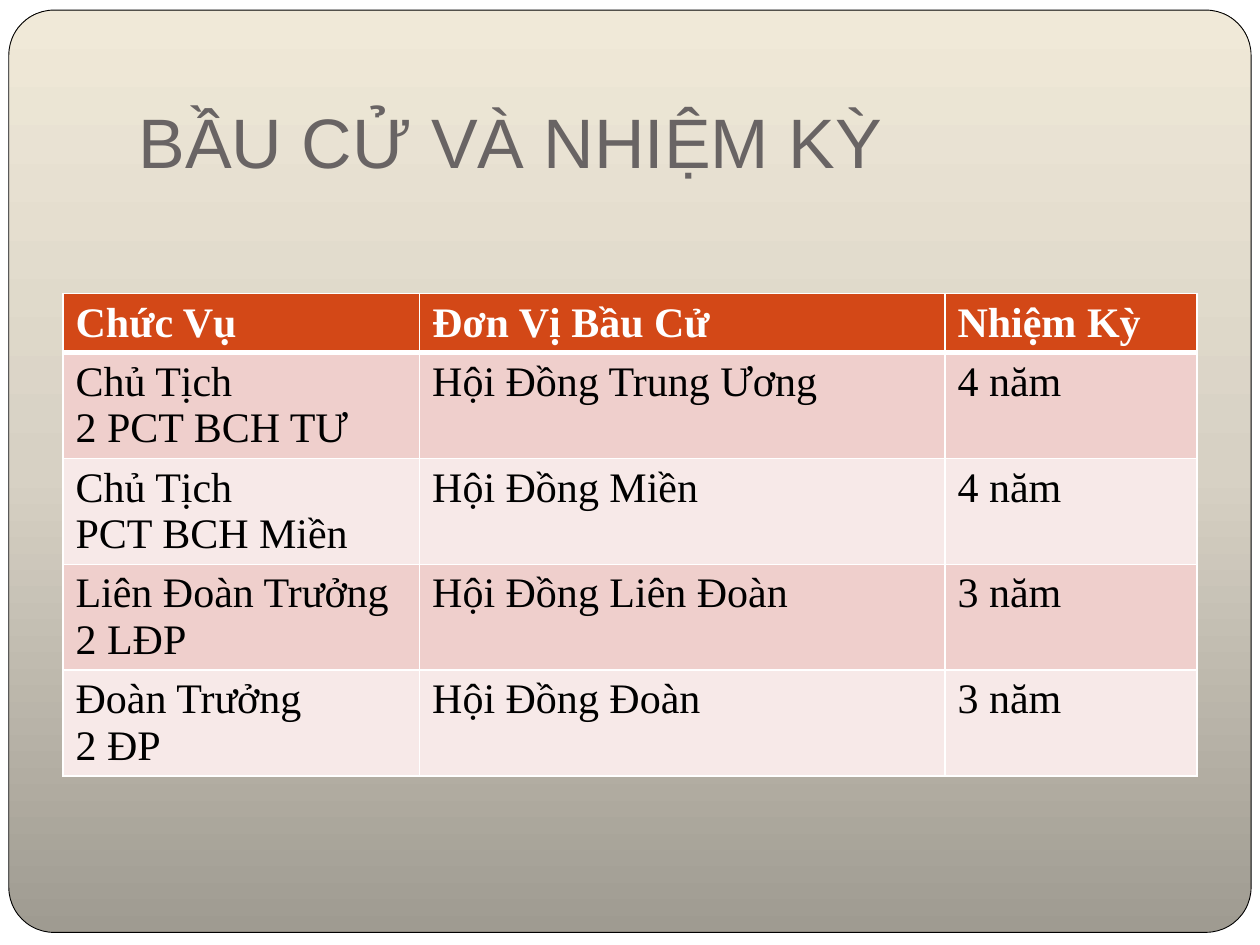
from copy import deepcopy

from lxml.etree import SubElement
from pptx import Presentation
from pptx.dml.color import RGBColor
from pptx.enum.shapes import MSO_SHAPE as Shape
from pptx.enum.text import MSO_ANCHOR as Anchor, PP_ALIGN as Align
from pptx.oxml.ns import qn
from pptx.util import Inches, Pt

WIDTH, HEIGHT = Inches(10), Inches(7.5)
COLORS = {
    "white": "FFFFFF", "black": "000000", "title": "696464", "header": "D34817",
    "odd": "EFCFCC", "even": "F7E9E8",
    "bottom": "9F9B91", "middle": "D7D1C4", "top": "F0E9D8",
}
TITLE_FONT = {"name": "Arial", "size": Pt(40), "bold": False}
HEADER_FONT = {"name": "Times New Roman", "size": Pt(24), "bold": True}
BODY_FONT = {**HEADER_FONT, "bold": False}
COLUMNS = [2.83, 4.17, 2]
HEADER_HEIGHT, BODY_HEIGHT = 0.46, 0.84
ROWS = [
    ("Chức Vụ", "Đơn Vị Bầu Cử", "Nhiệm Kỳ"),
    ("Chủ Tịch \v2 PCT BCH TƯ", "Hội Đồng Trung Ương", "4 năm"),
    ("Chủ Tịch\vPCT BCH Miền", "Hội Đồng Miền", "4 năm"),
    ("Liên Đoàn Trưởng \v2 LĐP", "Hội Đồng Liên Đoàn", "3 năm"),
    ("Đoàn Trưởng\v2 ĐP", "Hội Đồng Đoàn", "3 năm"),
]


def color(name):
    return RGBColor.from_string(COLORS[name])


def set_all(target, values):
    for name, value in values.items():
        setattr(target, name, value)


def place(left, top, width, height):
    return {"left": Inches(left), "top": Inches(top),
            "width": Inches(width), "height": Inches(height)}


def write(frame, text, font, color_name):
    para = frame.paragraphs[0]
    para.text = text
    para.alignment = Align.LEFT
    for span in para.runs:
        set_all(span.font, font)
        span.font.color.rgb = color(color_name)


def fill_gradient(fill, names):
    fill.gradient()
    fill.gradient_angle = 90
    first, last = fill.gradient_stops
    first.color.rgb = color(names[0])
    last.color.rgb = color(names[2])
    stop_list = fill._fill._gradFill.find(qn("a:gsLst"))
    stop_list.insert(1, deepcopy(stop_list[0]))
    middle = fill.gradient_stops[1]
    middle.color.rgb = color(names[1])
    for stop, position in zip(fill.gradient_stops, (0, 0.5, 1)):
        stop.position = position


def add_panel(page):
    box = page.shapes.add_shape(Shape.ROUNDED_RECTANGLE,
                                **place(0.07, 0.08, 9.86, 7.32))
    box.adjustments[0] = 0.049
    box.shadow.inherit = False
    fill_gradient(box.fill, ("bottom", "middle", "top"))
    box.line.color.rgb = color("black")
    box.line.width = Pt(0.5)
    page.shapes.title.element.addprevious(box.element)


def add_title(page, text):
    title = page.shapes.title
    set_all(title, place(1, 0.3, 8.5, 1.25))
    set_all(title.text_frame, {
        "vertical_anchor": Anchor.BOTTOM, "word_wrap": True,
        "margin_left": Inches(0.1), "margin_right": Inches(0.1),
        "margin_top": Inches(0.05), "margin_bottom": Inches(0.1),
    })
    write(title.text_frame, text, TITLE_FONT, "title")


def set_borders(cell, widths):
    properties = cell._tc.get_or_add_tcPr()
    for index, (side, points) in enumerate(widths.items()):
        line = SubElement(properties, qn(f"a:ln{side}"), w=str(Pt(points)))
        fill = SubElement(line, qn("a:solidFill"))
        SubElement(fill, qn("a:srgbClr"), val=COLORS["white"])
        properties.insert(index, line)


def add_term_table(page):
    height = HEADER_HEIGHT + BODY_HEIGHT * (len(ROWS) - 1)
    table = page.shapes.add_table(len(ROWS), len(COLUMNS),
                                  **place(0.5, 2.33, sum(COLUMNS), height)).table
    for column, width in zip(table.columns, COLUMNS):
        column.width = Inches(width)
    for number, texts in enumerate(ROWS):
        header = number == 0
        table.rows[number].height = Inches(HEADER_HEIGHT if header else BODY_HEIGHT)
        fill_name = "header" if header else ("even", "odd")[number % 2]
        widths = {"L": 1, "R": 1, "T": 3 if number == 1 else 1, "B": 3 if header else 1}
        for cell, text in zip(table.rows[number].cells, texts):
            cell.fill.solid()
            cell.fill.fore_color.rgb = color(fill_name)
            set_borders(cell, widths)
            write(cell.text_frame, text, HEADER_FONT if header else BODY_FONT,
                  "white" if header else "black")


def main():
    deck = Presentation()
    set_all(deck, {"slide_width": WIDTH, "slide_height": HEIGHT})
    page = deck.slides.add_slide(deck.slide_layouts.get_by_name("Title Only"))
    page.background.fill.solid()
    page.background.fill.fore_color.rgb = color("white")
    add_panel(page)
    add_title(page, "BẦU CỬ VÀ NHIỆM KỲ")
    add_term_table(page)
    deck.save("out.pptx")


if __name__ == "__main__":
    main()
